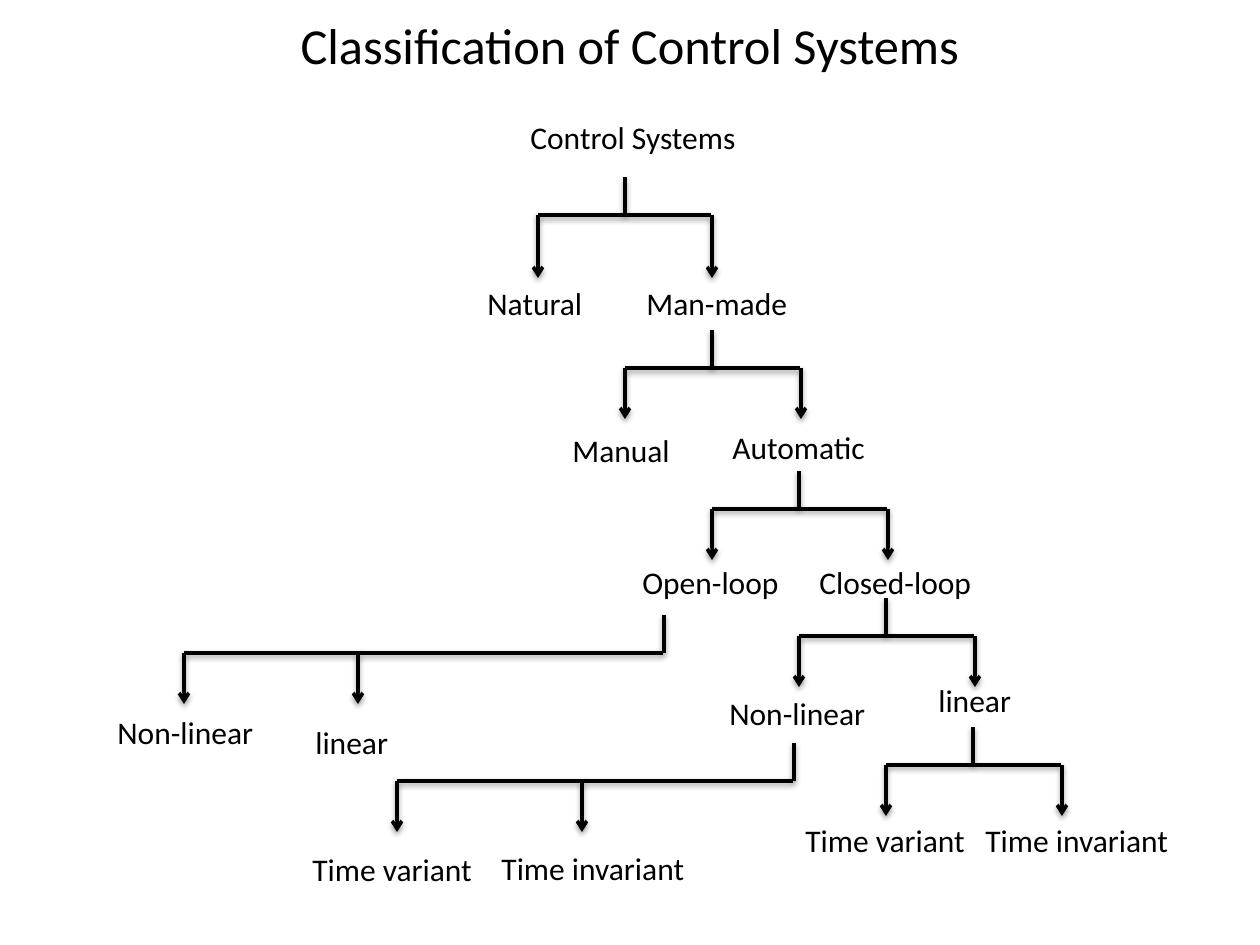
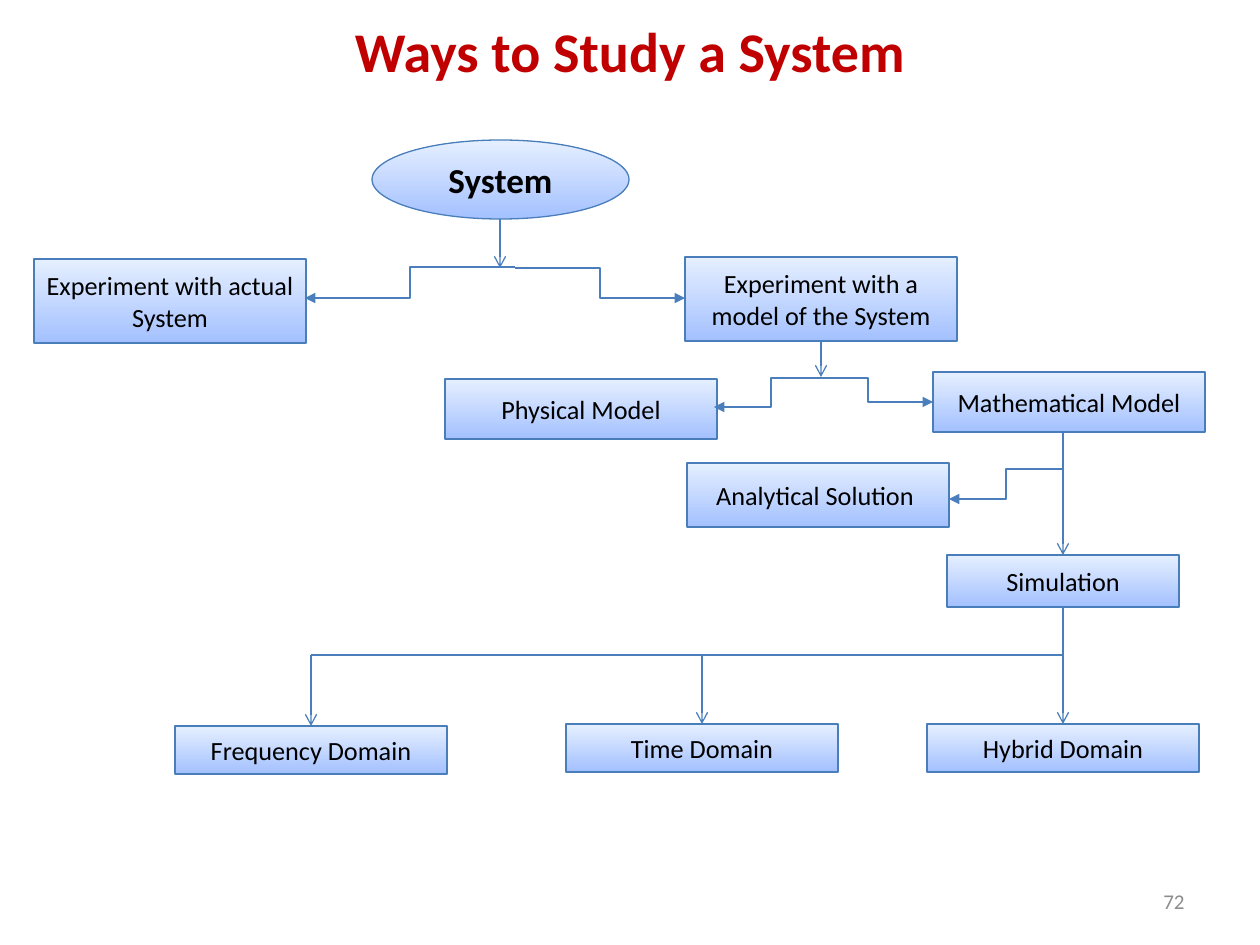
from lxml import etree
from pptx import Presentation
from pptx import util as u
from pptx.dml.color import RGBColor
from pptx.enum import shapes, text
from pptx.oxml.ns import qn

PX = 914400 / 126
FONT = "Calibri"
HUES = {"ink": "000000", "red": "C00000", "gray": "8C8C8C",
        "edge": "4A7EBB", "wire": "4B7EBC", "deep": "A4C1FF", "pale": "E5EFFF"}
KIND = shapes.MSO_SHAPE
WIRE = shapes.MSO_CONNECTOR
SIDE = text.PP_ALIGN
MID = text.MSO_ANCHOR.MIDDLE


def write(page, words, box, kind=None, size=18, hue="ink", bold=False,
          align=SIDE.LEFT, anchor=text.MSO_ANCHOR.TOP, wrap=True):
    spot = [round(n * PX) for n in box]
    if kind is None:
        item = page.shapes.add_textbox(*spot)
    else:
        item = page.shapes.add_shape(kind, *spot)
        item.shadow.inherit = False
        item.fill.gradient()
        item.fill.gradient_angle = 90
        for stop, tint in zip(item.fill.gradient_stops, ("deep", "pale")):
            stop.color.rgb = RGBColor.from_string(HUES[tint])
        item.line.color.rgb = RGBColor.from_string(HUES["edge"])
        item.line.width = u.Pt(0.75)
    frame = item.text_frame
    frame.word_wrap = wrap
    frame.vertical_anchor = anchor
    para = frame.paragraphs[0]
    para.alignment = align
    run = para.add_run()
    run.text = words
    run.font.name = FONT
    run.font.size = u.Pt(size)
    run.font.bold = bold
    run.font.color.rgb = RGBColor.from_string(HUES[hue])
    return item


def link(page, ends, kind=WIRE.STRAIGHT, hue="wire", width=0.75, head=None, shade=False):
    wire = page.shapes.add_connector(kind, *[round(n * PX) for n in ends])
    wire.line.color.rgb = RGBColor.from_string(HUES[hue])
    wire.line.width = u.Pt(width)
    if head:
        etree.SubElement(wire.line._get_or_add_ln(), qn("a:tailEnd"), type=head)
    fx = etree.SubElement(wire._element.spPr, qn("a:effectLst"))
    if shade:
        drop = etree.SubElement(fx, qn("a:outerShdw"), blurRad="40000", dist="20000",
                                dir="5400000", rotWithShape="0")
        tone = etree.SubElement(drop, qn("a:srgbClr"), val=HUES["ink"])
        etree.SubElement(tone, qn("a:alpha"), val="38000")
    return wire


deck = Presentation()
deck.slide_width = round(1260 * PX)
deck.slide_height = round(945 * PX)
blank = deck.slide_layouts[6]
title = {"align": SIDE.CENTER, "anchor": MID}

tree = deck.slides.add_slide(blank)
write(tree, "Classification of Control Systems", (63, 6, 1134, 77), size=28.8, **title)

labels = [
    ("Control Systems", 518, 112, 232), ("Natural", 475, 278, 121),
    ("Man-made", 634, 278, 168), ("Manual", 560, 425, 123),
    ("Automatic", 720, 422, 159), ("Open-loop", 630, 557, 164),
    ("Closed-loop", 807, 557, 179), ("Non-linear", 717, 688, 163),
    ("linear", 926, 675, 100), ("Time variant", 793, 815, 186),
    ("Time invariant", 973, 815, 210), ("Non-linear", 105, 707, 163),
    ("linear", 303, 717, 100), ("Time variant", 300, 844, 186),
    ("Time invariant", 489, 843, 210),
]
for words, left, top, width in labels:
    write(tree, words, (left, top, width, 50), wrap=False)

forks = [
    (625, 215, 538, 712, 63), (712, 368, 625, 801, 51), (799, 509, 712, 888, 51),
    (886, 636, 799, 975, 51), (973, 765, 886, 1062, 51), (664, 653, 184, 358, 51),
    (794, 781, 397, 582, 51),
]
bold_line = {"hue": "ink", "width": 2, "shade": True}
for stem, bar, left, right, drop in forks:
    link(tree, (max(stem, right) - 1, bar, left, bar), **bold_line)
    for x in (left, right):
        link(tree, (x, bar, x, bar + drop), head="arrow", **bold_line)
    link(tree, (stem, bar, stem, bar - 38), **bold_line)

ways = deck.slides.add_slide(blank)
write(ways, "Ways to Study a System", (63, 6, 1134, 88), size=32, hue="red", bold=True, **title)
write(ways, "72", (903, 876, 294, 50), size=12, hue="gray", align=SIDE.RIGHT, anchor=MID)
write(ways, "System", (372, 140, 257, 79), kind=KIND.OVAL, size=20, bold=True, **title)

boxes = {
    "model": ("Experiment with a model of the System", 685, 257, 272, 84),
    "actual": ("Experiment with actual System", 34, 259, 272, 84),
    "physical": ("Physical Model", 445, 379, 272, 60),
    "math": ("Mathematical Model", 933, 372, 272, 60),
    "solve": ("Analytical Solution ", 687, 463, 262, 64),
    "sim": ("Simulation", 947, 555, 232, 52),
    "freq": ("Frequency Domain", 175, 726, 272, 48),
    "time": ("Time Domain", 566, 724, 272, 48),
    "hybrid": ("Hybrid Domain", 927, 724, 272, 48),
}
nodes = {}
for name, (words, *box) in boxes.items():
    nodes[name] = write(ways, words, box, kind=KIND.RECTANGLE, size=15, **title)

bends = [
    (515, 268, 685, 298), (515, 267, 305, 298), (803, 378, 933, 402),
    (828, 378, 714, 407), (1063, 469, 949, 499),
]
for ends in bends:
    link(ways, ends, kind=WIRE.ELBOW, head="triangle")

bar = 655
link(ways, (1063, bar, 311, bar))
arrows = [
    ((500, 219, 500, 268), None, None),
    ((821, 341, 821, 377), "model", None),
    ((1063, 433, 1063, 555), None, "sim"),
    ((1063, 607, 1063, 724), "sim", "hybrid"),
    ((311, bar, 311, 726), None, "freq"),
    ((702, bar, 702, 724), None, "time"),
]
for ends, start, goal in arrows:
    wire = link(ways, ends, head="arrow")
    if start:
        wire.begin_connect(nodes[start], 2)
    if goal:
        wire.end_connect(nodes[goal], 0)

deck.save("out.pptx")
